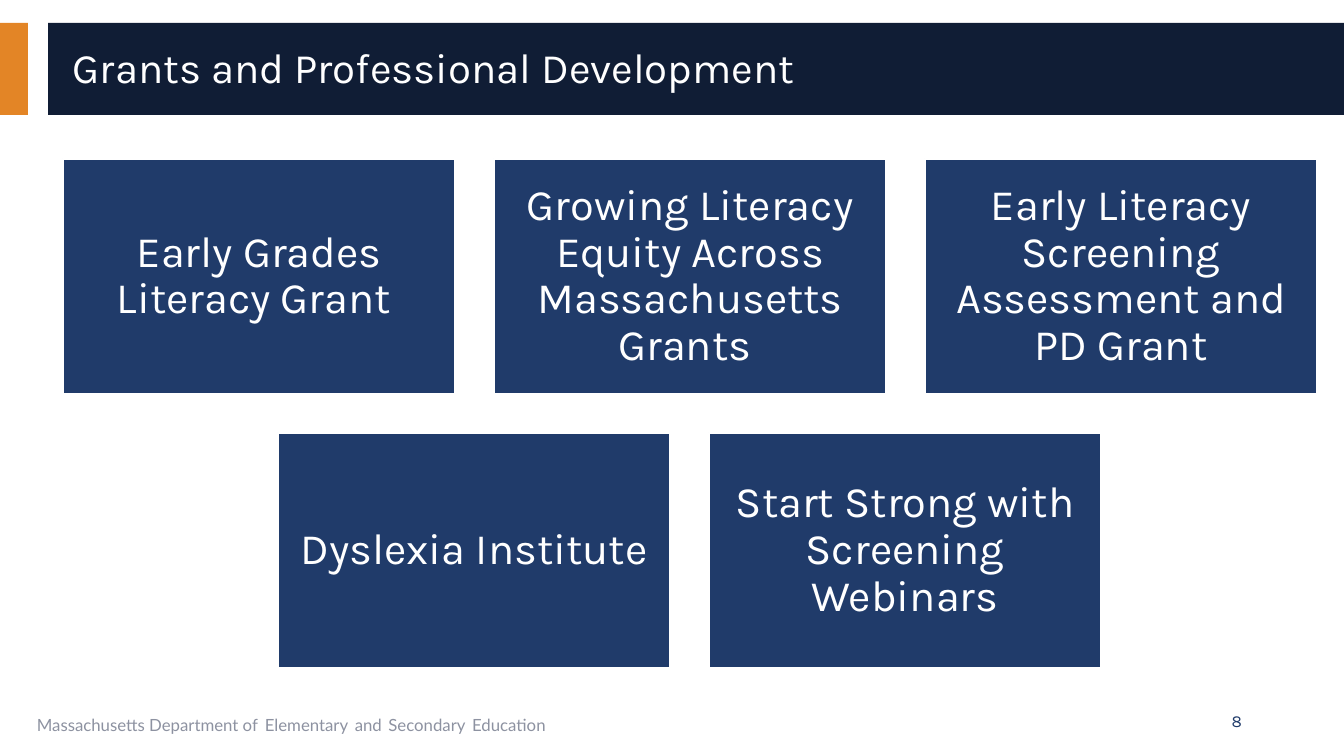
from pptx import Presentation
from pptx import util as u
from pptx.dml.color import RGBColor
from pptx.enum import shapes, text

PX = 914400 / 100.8
NAVY = RGBColor(0x10, 0x1D, 0x35)
BLUE = RGBColor(0x20, 0x3B, 0x6A)
ORANGE = RGBColor(0xE3, 0x85, 0x26)
GREY = RGBColor(0x8D, 0x92, 0xA1)
WHITE = RGBColor(0xFF, 0xFF, 0xFF)

CARD_W, CARD_H = 392, 235
STEP_X, STEP_Y = 431, 274
CARD_ROWS = [
    (63, ["Early Grades Literacy Grant ",
          "Growing Literacy Equity Across Massachusetts Grants ",
          "Early Literacy Screening Assessment and PD Grant"]),
    (278, ["Dyslexia Institute", "Start Strong with Screening Webinars"]),
]


def px(*lengths):
    return [u.Emu(round(length * PX)) for length in lengths]


def add_rect(left, top, width, height, fill):
    rect = slide.shapes.add_shape(
        shapes.MSO_SHAPE.RECTANGLE, *px(left, top, width, height))
    rect.shadow.inherit = False
    rect.fill.solid()
    rect.fill.fore_color.rgb = fill
    rect.line.fill.background()
    return rect


prs = Presentation()
prs.slide_width, prs.slide_height = px(1344, 756)
slide = prs.slides.add_slide(prs.slide_layouts[6])

# Header band
add_rect(0, 23, 28, 92, ORANGE)
add_rect(48, 23, 1296, 92, NAVY)

title = slide.shapes.add_textbox(*px(63, 32, 1254, 75)).text_frame
title.word_wrap = True
title.vertical_anchor = text.MSO_ANCHOR.MIDDLE
heading = title.paragraphs[0]
heading.text = "Grants and Professional Development"
heading.line_spacing = 0.9
heading.font.size = u.Pt(30)
heading.font.name = "Karla"
heading.font.color.rgb = WHITE

# Programme cards
for row, (row_left, programmes) in enumerate(CARD_ROWS):
    for column, programme in enumerate(programmes):
        card = add_rect(row_left + column * STEP_X, 159 + row * STEP_Y,
                        CARD_W, CARD_H, BLUE)
        card.line.color.rgb = WHITE
        card.line.width = u.Pt(1)
        frame = card.text_frame
        frame.word_wrap = True
        frame.vertical_anchor = text.MSO_ANCHOR.MIDDLE
        frame.margin_left, frame.margin_top = px(13, 13)
        frame.margin_right, frame.margin_bottom = px(13, 13)
        label = frame.paragraphs[0]
        label.text = programme
        label.alignment = text.PP_ALIGN.CENTER
        label.line_spacing = 0.9
        label.font.size = u.Pt(31)
        label.font.name = "Karla"
        label.font.color.rgb = WHITE

# Footer: the gaps between the later words are set larger than the words
footer = slide.shapes.add_textbox(*px(27, 701, 851, 40)).text_frame
footer.word_wrap = True
department = footer.paragraphs[0]
department.font.name = "Lato"
for part in ["Massachusetts Department of", " ", "Elementary", " ", "and", " ",
             "Secondary", " ", "Education"]:
    run = department.add_run()
    run.text = part
    run.font.name = "Lato"
    run.font.size = u.Pt(18 if part == " " else 12)
    run.font.color.rgb = BLUE if part == " " else GREY

page = slide.shapes.add_textbox(*px(950, 701, 302, 40)).text_frame
page.word_wrap = True
page.vertical_anchor = text.MSO_ANCHOR.MIDDLE
number = page.paragraphs[0]
number.text = "8"
number.alignment = text.PP_ALIGN.RIGHT
number.font.size = u.Pt(12)
number.font.name = "Karla"
number.font.color.rgb = BLUE

prs.save("out.pptx")
